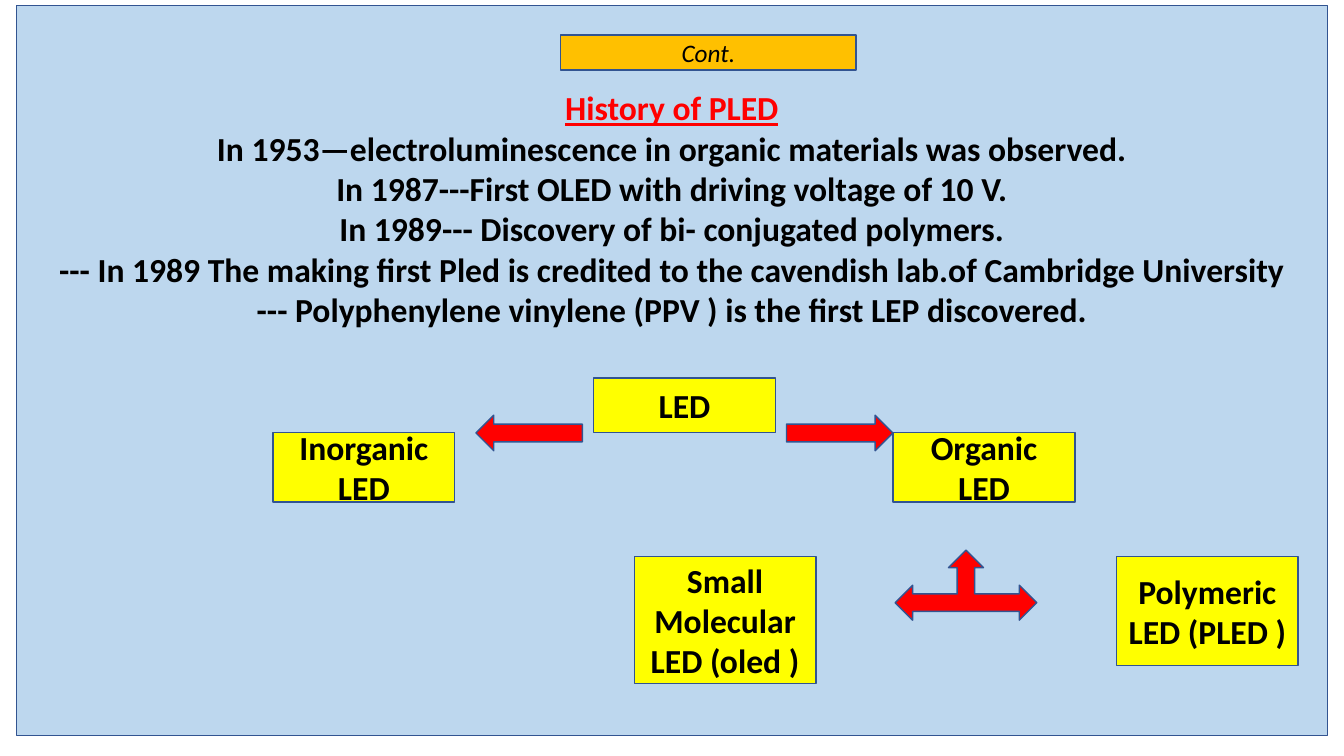
import pptx
import pptx.util
import pptx.dml.color
import pptx.enum.shapes
import pptx.enum.text

Pt = pptx.util.Pt
SHAPES = pptx.enum.shapes.MSO_SHAPE
ANCHOR = pptx.enum.text.MSO_ANCHOR

OUTLINE, PANEL, TITLE_FILL = "325491", "BDD7EE", "FFC000"
YELLOW, RED, BLACK = "FFFF00", "FF0000", "000000"
BOX_WIDTH = 129.8
ARROW_TOP, ARROW_WIDTH, ARROW_HEIGHT = 296.6, 76, 25.4

HISTORY = [
    "In 1953—electroluminescence in organic materials was observed.",
    "In 1987---First OLED with driving voltage of 10 V.",
    "In 1989--- Discovery of bi- conjugated polymers.",
    "--- In 1989 The making first Pled is credited to the cavendish lab.of Cambridge University",
    "--- Polyphenylene vinylene (PPV ) is the first LEP discovered.",
]

# label, left, top, height
LED_BOXES = [
    ("LED", 424, 270, 39),
    ("Inorganic LED", 195, 309, 49.6),
    ("Organic LED", 638, 309, 49.6),
    ("Small Molecular LED (oled )", 453, 397.6, 90.7),
    ("Polymeric LED (PLED )", 797.5, 397.6, 77.8),
]

# shape, left, top, width, height
ARROWS = [
    (SHAPES.LEFT_ARROW, 340, ARROW_TOP, ARROW_WIDTH, ARROW_HEIGHT),
    (SHAPES.RIGHT_ARROW, 561.8, ARROW_TOP, ARROW_WIDTH, ARROW_HEIGHT),
    (SHAPES.LEFT_RIGHT_UP_ARROW, 639.4, 393, 101.2, 50),
]


def color(value):
    return pptx.dml.color.RGBColor.from_string(value)


def add_shape(slide, kind, left, top, width, height, fill):
    shape = slide.shapes.add_shape(kind, Pt(left), Pt(top), Pt(width), Pt(height))
    shape.shadow.inherit = False
    shape.fill.solid()
    shape.fill.fore_color.rgb = color(fill)
    shape.line.color.rgb = color(OUTLINE)
    shape.line.width = Pt(1)
    shape.text_frame.word_wrap = True
    shape.text_frame.vertical_anchor = ANCHOR.MIDDLE
    return shape


def write(paragraph, text, size=24, fill=BLACK, bold=True, italic=False, underline=False):
    paragraph.alignment = pptx.enum.text.PP_ALIGN.CENTER
    run = paragraph.add_run()
    run.text = text
    font = run.font
    font.name, font.size = "Calibri", Pt(size)
    font.bold, font.italic, font.underline = bold, italic, underline
    font.color.rgb = color(fill)


def add_history(slide):
    panel = add_shape(slide, SHAPES.RECTANGLE, 11.6, 3.8, 936.6, 521.4, PANEL)
    frame = panel.text_frame
    frame.vertical_anchor = ANCHOR.TOP
    frame.margin_top = Pt(58.5)
    write(frame.paragraphs[0], "History of PLED", fill=RED, underline=True)
    for event in HISTORY:
        write(frame.add_paragraph(), event)


def main():
    presentation = pptx.Presentation()
    presentation.slide_width, presentation.slide_height = Pt(960), Pt(540)
    slide = presentation.slides.add_slide(presentation.slide_layouts[6])

    # Background panel with the history, and the title above it
    add_history(slide)
    title = add_shape(slide, SHAPES.RECTANGLE, 400.5, 25, 211, 25, TITLE_FILL)
    write(title.text_frame.paragraphs[0], "Cont.", size=18, bold=False, italic=True)

    # Classification of LEDs
    for label, left, top, height in LED_BOXES:
        box = add_shape(slide, SHAPES.RECTANGLE, left, top, BOX_WIDTH, height, YELLOW)
        write(box.text_frame.paragraphs[0], label)
    for kind, left, top, width, height in ARROWS:
        add_shape(slide, kind, left, top, width, height, RED)

    presentation.save("out.pptx")


if __name__ == "__main__":
    main()
